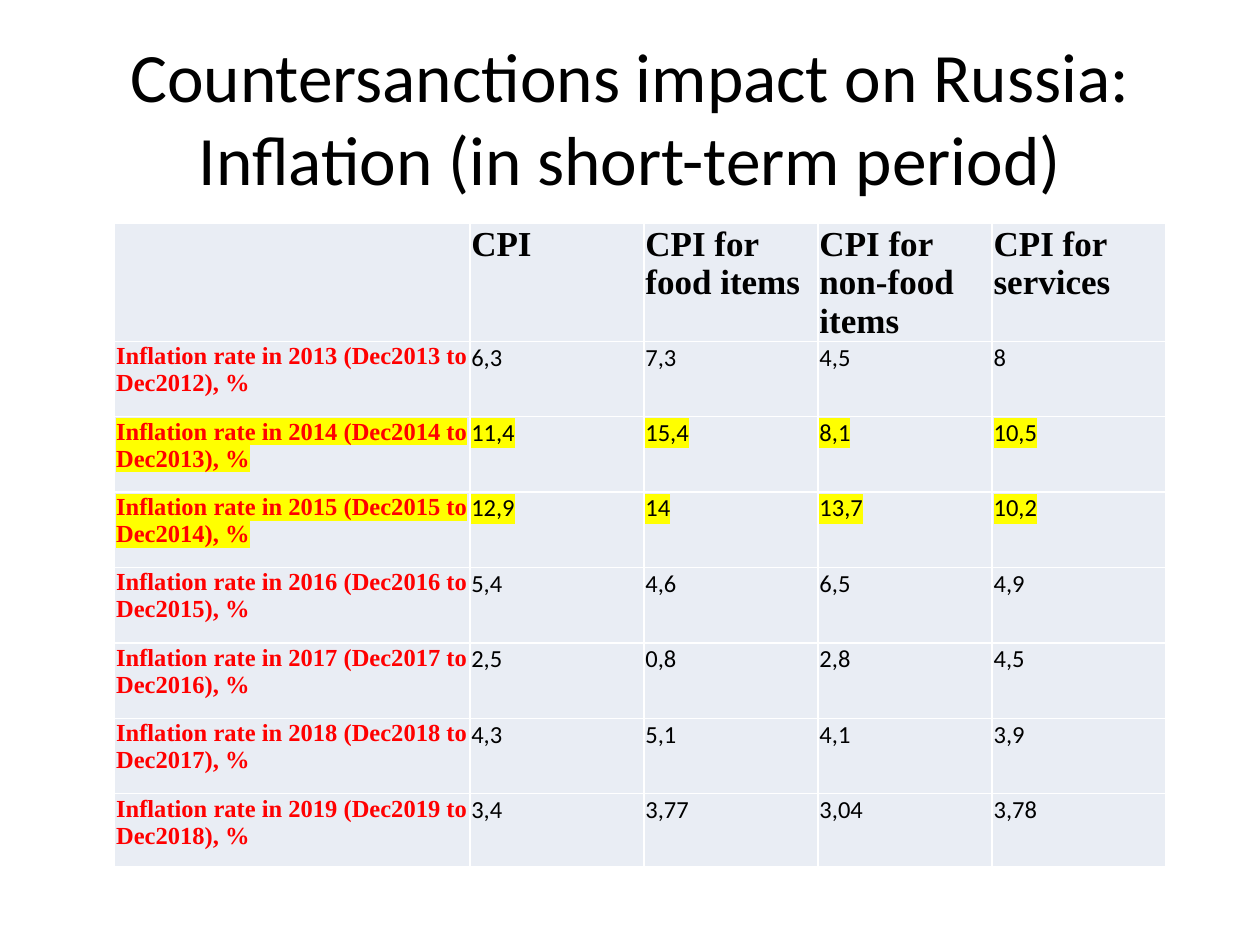
from dataclasses import dataclass

from lxml.etree import SubElement
from pptx import Presentation
from pptx.dml.color import RGBColor
from pptx.enum.text import MSO_ANCHOR, MSO_AUTO_SIZE, PP_ALIGN
from pptx.oxml import parse_xml
from pptx.oxml.ns import nsdecls, qn
from pptx.util import Cm, Pt


@dataclass(frozen=True)
class Theme:
    black: str = "000000"
    red: str = "FF0000"
    yellow: str = "FFFF00"
    cell: str = "E9EDF4"
    border: str = "FFFFFF"
    sans: str = "Calibri"
    serif: str = "Times New Roman"
    title_size: float = 39.6
    header_size: int = 20
    body_size: int = 14


THEME = Theme()
TITLE_FONT = {"name": THEME.sans, "size": Pt(THEME.title_size), "bold": False}
HEADER_FONT = {"name": THEME.serif, "size": Pt(THEME.header_size), "bold": True}
LABEL_FONT = {"name": THEME.serif, "size": Pt(THEME.body_size), "bold": True}
VALUE_FONT = {"name": THEME.sans, "size": Pt(THEME.body_size), "bold": False}
CELL_FORMAT = {
    "margin_left": Cm(0.03),
    "margin_right": Cm(0.03),
    "margin_top": Cm(0.03),
    "margin_bottom": 0,
    "vertical_anchor": MSO_ANCHOR.TOP,
}

TITLE = "Countersanctions impact on Russia: Inflation (in short-term period)"
HEADERS = ["CPI", "CPI for food items", "CPI for non-food items", "CPI for services"]
RATES = {
    2013: ["6,3", "7,3", "4,5", "8"],
    2014: ["11,4", "15,4", "8,1", "10,5"],
    2015: ["12,9", "14", "13,7", "10,2"],
    2016: ["5,4", "4,6", "6,5", "4,9"],
    2017: ["2,5", "0,8", "2,8", "4,5"],
    2018: ["4,3", "5,1", "4,1", "3,9"],
    2019: ["3,4", "3,77", "3,04", "3,78"],
}
SANCTION_YEARS = {2014, 2015}
COLUMN_WIDTHS = [Cm(7.16)] + [Cm(3.51)] * 4
ROW_HEIGHTS = [Cm(1.98)] + [Cm(1.52)] * 6 + [Cm(1.47)]


def apply_format(target, values):
    for name, value in values.items():
        setattr(target, name, value)


def write(paragraph, text, font, color, highlight=None):
    run = paragraph.add_run()
    run.text = text
    apply_format(run.font, font)
    run.font.color.rgb = RGBColor.from_string(color)
    if highlight:
        marker = parse_xml(
            f'<a:highlight {nsdecls("a")}><a:srgbClr val="{highlight}"/></a:highlight>'
        )
        run.font._element.find(qn("a:solidFill")).addnext(marker)


def add_title(slide):
    title = slide.shapes.title
    apply_format(title, {"left": Cm(1.27), "top": Cm(0.76),
                         "width": Cm(22.86), "height": Cm(3.18)})
    apply_format(title.text_frame, {"word_wrap": True, "auto_size": MSO_AUTO_SIZE.NONE,
                                    "vertical_anchor": MSO_ANCHOR.MIDDLE})
    heading = title.text_frame.paragraphs[0]
    heading.alignment = PP_ALIGN.CENTER
    write(heading, TITLE, TITLE_FONT, THEME.black)


def style_cell(cell):
    """Set margins, fill and the four borders of a cell."""
    apply_format(cell, CELL_FORMAT)
    properties = cell._tc.get_or_add_tcPr()
    for side in ("a:lnL", "a:lnR", "a:lnT", "a:lnB"):
        border = SubElement(properties, qn(side), w=str(Pt(1)))
        fill = SubElement(border, qn("a:solidFill"))
        SubElement(fill, qn("a:srgbClr"), val=THEME.border)
    cell.fill.solid()
    cell.fill.fore_color.rgb = RGBColor.from_string(THEME.cell)


def fill_row(cells, texts, fonts_and_colors, highlight=None):
    for cell, text, (font, color) in zip(cells, texts, fonts_and_colors):
        write(cell.text_frame.paragraphs[0], text, font, color, highlight)


def add_inflation_table(slide):
    table = slide.shapes.add_table(
        len(ROW_HEIGHTS), len(COLUMN_WIDTHS), Cm(2.31), Cm(4.5),
        sum(COLUMN_WIDTHS), sum(ROW_HEIGHTS)
    ).table
    for column, width in zip(table.columns, COLUMN_WIDTHS):
        column.width = width
    for row, height in zip(table.rows, ROW_HEIGHTS):
        row.height = height
    for cell in table.iter_cells():
        style_cell(cell)

    header_row, *year_rows = table.rows
    fill_row(list(header_row.cells)[1:], HEADERS,
             [(HEADER_FONT, THEME.black)] * len(HEADERS))
    for row, (year, rates) in zip(year_rows, RATES.items()):
        label = f"Inflation rate in {year} (Dec{year} to Dec{year - 1}), %"
        styles = [(LABEL_FONT, THEME.red)] + [(VALUE_FONT, THEME.black)] * len(rates)
        highlight = THEME.yellow if year in SANCTION_YEARS else None
        fill_row(row.cells, [label, *rates], styles, highlight)


def main():
    presentation = Presentation()
    apply_format(presentation, {"slide_width": Cm(25.4), "slide_height": Cm(19.05)})
    slide = presentation.slides.add_slide(presentation.slide_layouts[5])
    add_title(slide)
    add_inflation_table(slide)
    presentation.save("out.pptx")


if __name__ == "__main__":
    main()
